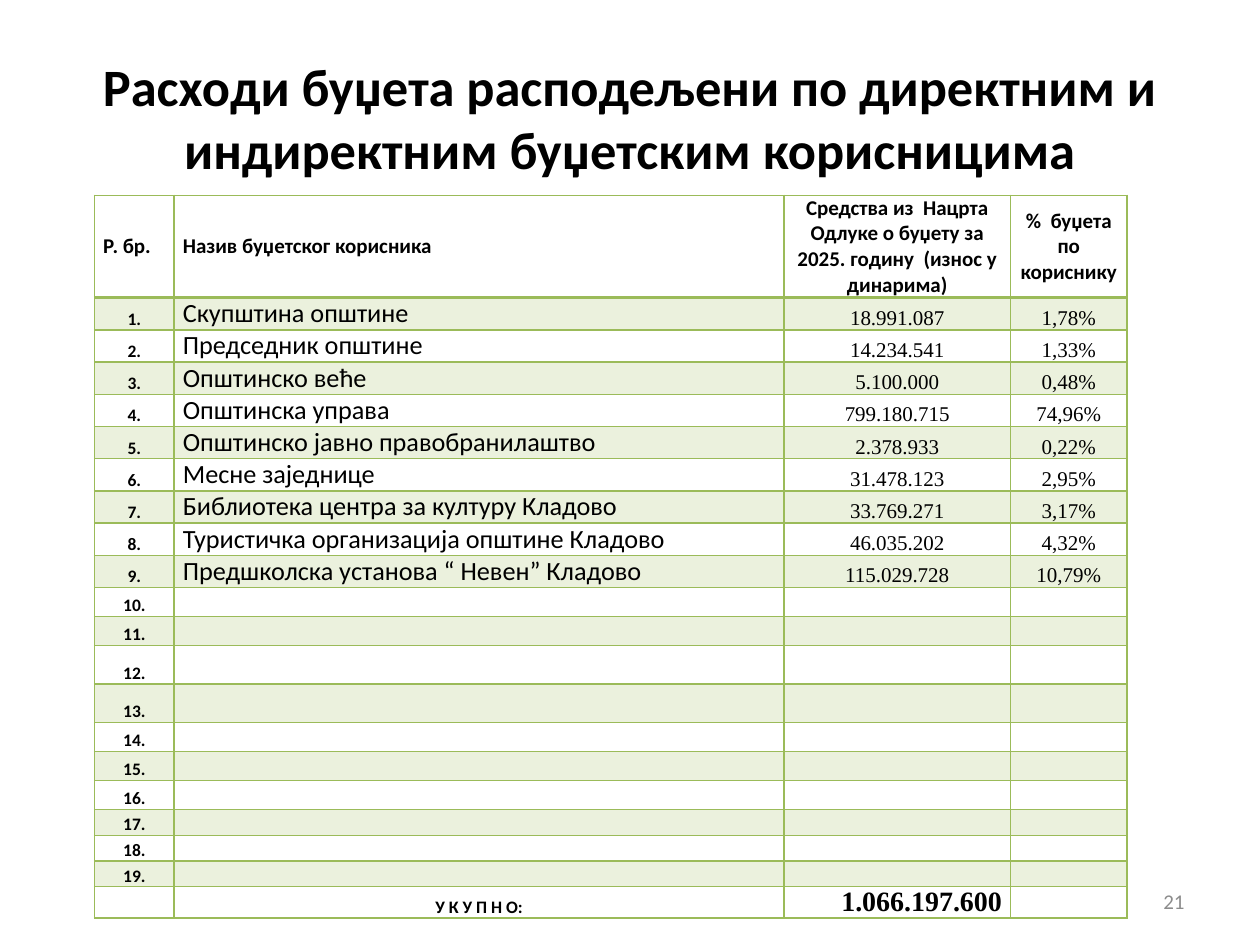
from lxml.etree import SubElement
from pptx import Presentation
from pptx.dml.color import RGBColor
from pptx.enum.text import MSO_ANCHOR, MSO_AUTO_SIZE, PP_ALIGN
from pptx.oxml.ns import qn
from pptx.util import Pt

BLACK = RGBColor(0x00, 0x00, 0x00)
GREEN = RGBColor(0x9B, 0xBB, 0x59)
GRAY = RGBColor(0x8C, 0x8C, 0x8C)
SANS, SERIF = "Calibri", "Times New Roman"
LEFT, CENTER, RIGHT = PP_ALIGN.LEFT, PP_ALIGN.CENTER, PP_ALIGN.RIGHT

TITLE = "Расходи буџета расподељени по директним и индиректним буџетским корисницима"
HEADINGS = [
    "Р. бр.",
    "Назив буџетског корисника",
    "Средства из  Нацрта Одлуке о буџету за 2025. годину  (износ у динарима)",
    "%  буџета по кориснику",
]
BENEFICIARIES = [
    ("Скупштина општине", "18.991.087", "1,78%"),
    ("Председник општине", "14.234.541", "1,33%"),
    ("Општинско веће", "5.100.000", "0,48%"),
    ("Општинска управа", "799.180.715", "74,96%"),
    ("Општинско јавно правобранилаштво", "2.378.933", "0,22%"),
    ("Месне заједнице", "31.478.123", "2,95%"),
    ("Библиотека центра за културу Кладово", "33.769.271", "3,17%"),
    ("Туристичка организација општине Кладово", "46.035.202", "4,32%"),
    ("Предшколска установа “ Невен” Кладово", "115.029.728", "10,79%"),
]
NUMBERED_ROWS = 19
COLUMN_WIDTHS = [45.5, 348.5, 129.5, 66.5]
ROW_HEIGHTS = ([58.4] + [18.4] * 9 + [16.6] * 2 + [22] * 2
               + [16.6] * 3 + [14.7] * 3 + [17.7])

# Size, font, bold and alignment of each column
HEADING_STYLES = [(12, SANS, True, align) for align in (LEFT, LEFT, CENTER, CENTER)]
BODY_STYLES = [(10, SANS, True, CENTER), (15, SANS, False, LEFT),
               (12, SERIF, False, CENTER), (12, SERIF, False, CENTER)]
EMPTY_STYLE = (10, SANS, False, LEFT)
TOTAL_STYLES = [EMPTY_STYLE, (10, SANS, True, CENTER),
                (16, SERIF, True, RIGHT), EMPTY_STYLE]


def write(paragraph, text, size, font, bold, align, color=BLACK):
    paragraph.alignment = align
    if not text:
        SubElement(paragraph._p, qn("a:endParaRPr"), sz=str(size * 100))
        return
    run = paragraph.add_run()
    run.text = text
    run.font.size = Pt(size)
    run.font.name = font
    run.font.bold = bold
    run.font.color.rgb = color


def set_borders(cell, top, bottom):
    properties = cell._tc.get_or_add_tcPr()
    for tag, width in (("lnL", 1), ("lnR", 1), ("lnT", top), ("lnB", bottom)):
        line = SubElement(properties, qn(f"a:{tag}"), w=str(Pt(width)))
        fill = SubElement(line, qn("a:solidFill"))
        SubElement(fill, qn("a:srgbClr"), val=str(GREEN))


def set_fill(cell, banded):
    if not banded:
        cell.fill.background()
        return
    cell.fill.solid()
    cell.fill.fore_color.rgb = GREEN
    color = cell._tc.tcPr.find(qn("a:solidFill")).find(qn("a:srgbClr"))
    SubElement(color, qn("a:alpha"), val="20000")


def table_rows():
    """Yield the texts and the column styles of each row."""
    yield HEADINGS, HEADING_STYLES
    for number in range(1, NUMBERED_ROWS + 1):
        if number <= len(BENEFICIARIES):
            yield [f"{number}.", *BENEFICIARIES[number - 1]], BODY_STYLES
        else:
            yield [f"{number}.", "", "", ""], [BODY_STYLES[0]] + [EMPTY_STYLE] * 3
    yield ["", "У К У П Н О:", "1.066.197.600", ""], TOTAL_STYLES


def add_title(slide, left, top, width, height):
    title = slide.shapes.title
    title.left, title.top, title.width, title.height = map(Pt, (left, top, width, height))
    frame = title.text_frame
    frame.auto_size = MSO_AUTO_SIZE.NONE
    frame.vertical_anchor = MSO_ANCHOR.MIDDLE
    write(frame.paragraphs[0], TITLE, 30, SANS, True, CENTER)


def add_budget_table(slide, left, top):
    table = slide.shapes.add_table(
        len(ROW_HEIGHTS), len(COLUMN_WIDTHS), Pt(left), Pt(top),
        Pt(sum(COLUMN_WIDTHS)), Pt(sum(ROW_HEIGHTS))).table
    table.first_row = table.horz_banding = False
    for column, width in zip(table.columns, COLUMN_WIDTHS):
        column.width = Pt(width)
    for index, (texts, styles) in enumerate(table_rows()):
        table.rows[index].height = Pt(ROW_HEIGHTS[index])
        for cell, text, style in zip(table.rows[index].cells, texts, styles):
            cell.margin_left = cell.margin_right = Pt(5)
            cell.margin_top = cell.margin_bottom = 0
            cell.vertical_anchor = MSO_ANCHOR.BOTTOM if index else MSO_ANCHOR.MIDDLE
            set_borders(cell, top=2 if index == 1 else 1, bottom=1 if index else 2)
            set_fill(cell, banded=index % 2 == 1)
            write(cell.text_frame.paragraphs[0], text, *style)


def add_page_number(slide, left, top, width, height):
    frame = slide.shapes.add_textbox(*map(Pt, (left, top, width, height))).text_frame
    frame.word_wrap = True
    frame.vertical_anchor = MSO_ANCHOR.MIDDLE
    write(frame.paragraphs[0], "21", 12, SANS, False, RIGHT, GRAY)


def main():
    presentation = Presentation()
    presentation.slide_width, presentation.slide_height = Pt(720), Pt(540)
    slide = presentation.slides.add_slide(presentation.slide_layouts[5])
    add_title(slide, 36, 21.6, 648, 90)
    add_budget_table(slide, 54, 111.6)
    add_page_number(slide, 516, 500.5, 168, 28.8)
    presentation.save("out.pptx")


if __name__ == "__main__":
    main()
